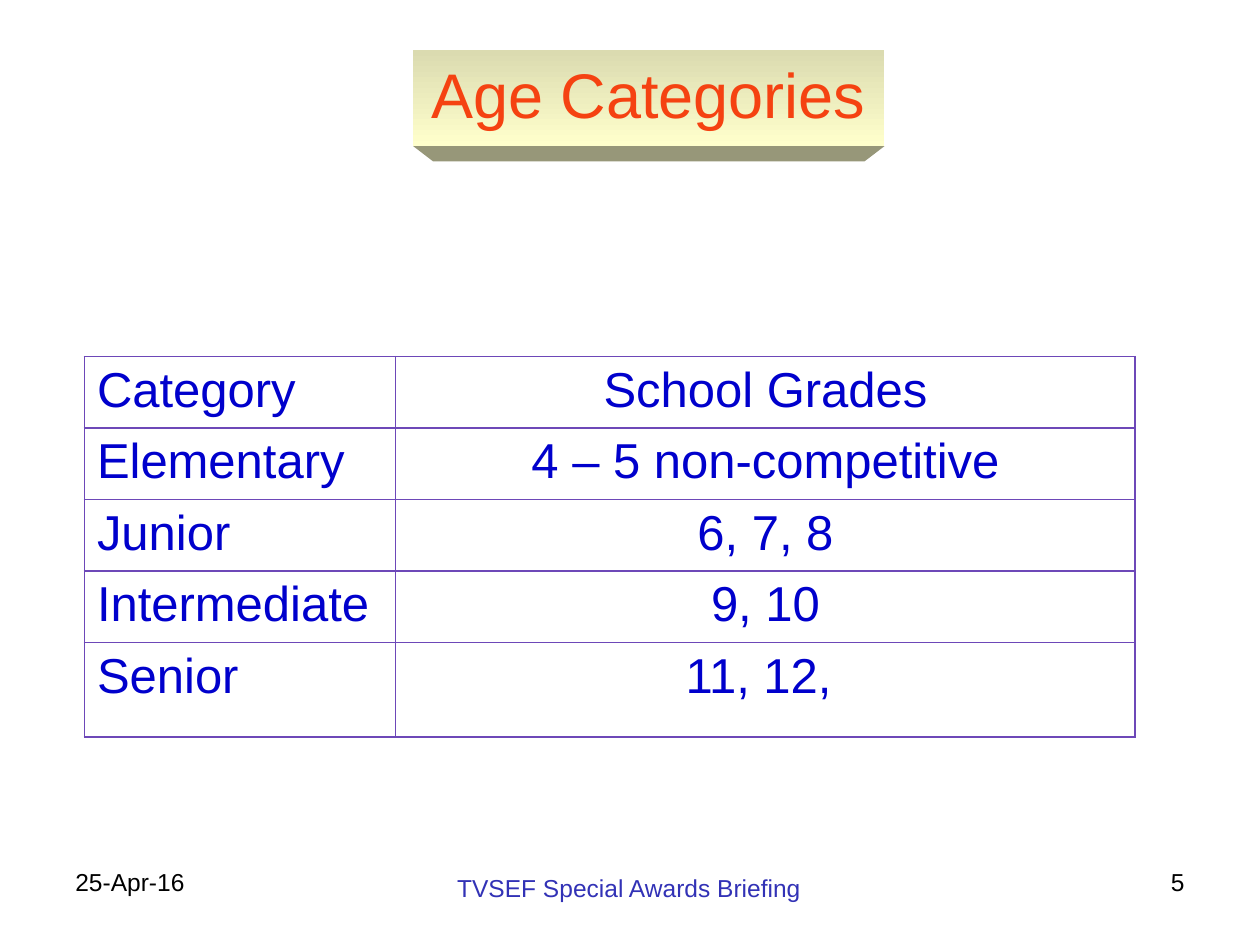
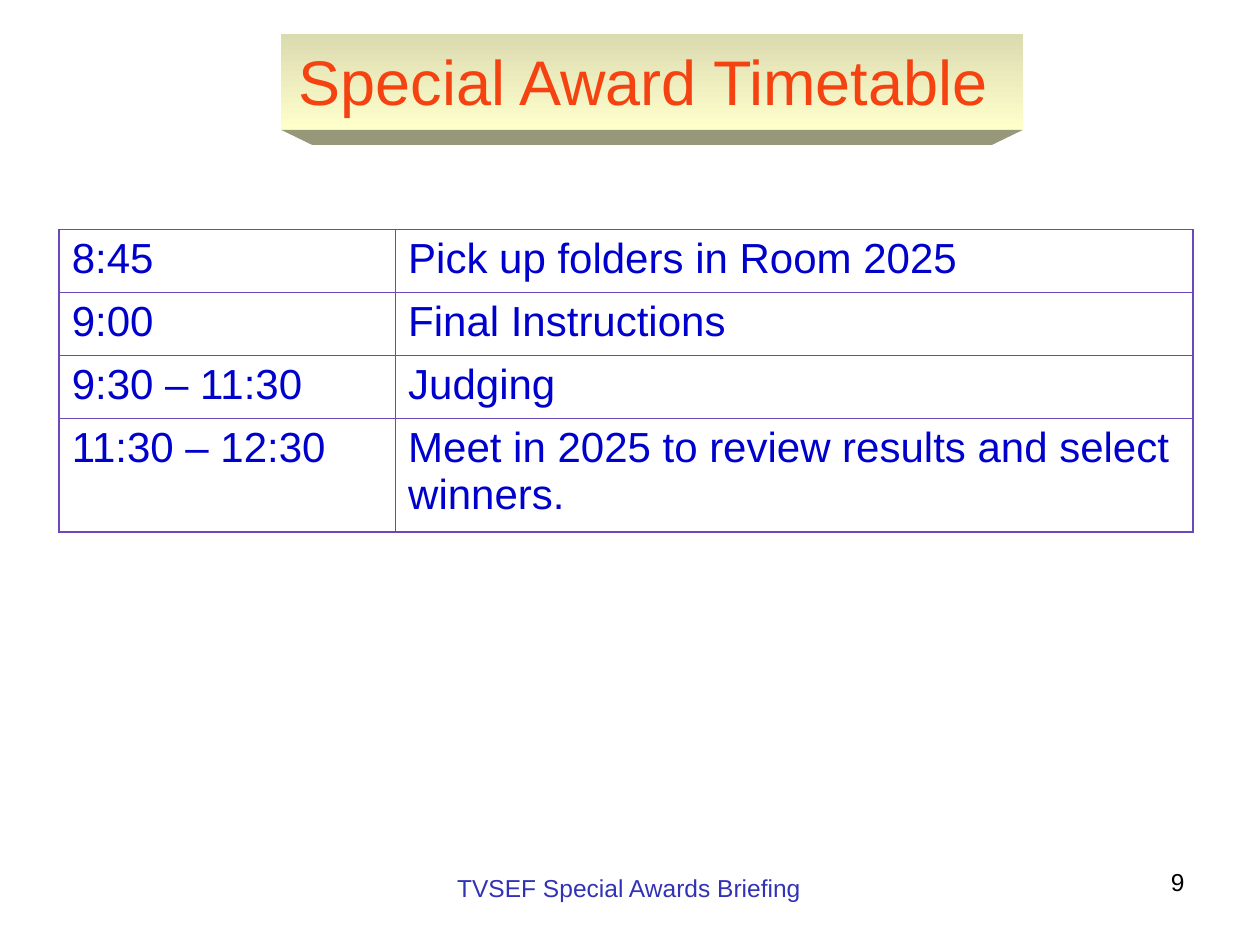
from lxml import etree
from pptx import Presentation
from pptx.dml.color import RGBColor
from pptx.enum.shapes import MSO_SHAPE as Shape
from pptx.enum.text import MSO_ANCHOR as Anchor, PP_ALIGN as Align
from pptx.oxml.ns import qn
from pptx.util import Inches, Pt

# Content
FOOT = "TVSEF Special Awards Briefing"
PAGES = [
    dict(
        title="Age Categories", head=(2.98, 0.39, 4.33, 0.7),
        band=(3.28, 0.4, 3.74, 0.76), date="25-Apr-16", num="5",
        at=(0.67, 2.83), cols=(2.47, 5.87), size=28,
        aligns=(Align.LEFT, Align.CENTER),
        heights=(0.53, 0.53, 0.53, 0.53, 0.75),
        rows=[
            ("Category", "School Grades"),
            ("Elementary", "4 – 5 non-competitive"),
            ("Junior", "6, 7, 8"),
            ("Intermediate", "9, 10"),
            ("Senior", "11, 12, "),
        ],
    ),
    dict(
        title="Special Award Timetable", head=(1.93, 0.28, 6.35, 0.72),
        band=(2.23, 0.27, 5.89, 0.76), date=None, num="9",
        at=(0.47, 1.82), cols=(2.67, 6.33), size=24,
        aligns=(Align.LEFT, Align.LEFT),
        heights=(0.47, 0.47, 0.5, 0.84),
        rows=[
            ("8:45", "Pick up folders in Room 2025"),
            ("9:00", "Final Instructions"),
            ("9:30 – 11:30", "Judging"),
            ("11:30 – 12:30", "Meet in 2025 to review results and select winners."),
        ],
    ),
]

# Shared style
FONT = "Arial"
RED, BLUE, INDIGO, BLACK = "F54211", "0000CC", "3232B6", "000000"
RULE, TOP, LOW, EDGE = "6D48B8", "DBDBB0", "FFFFCC", "979779"
DEPTH, SLANT = 0.12, 0.042  # bevel height, and its inset per band width


def color(code):
    return RGBColor.from_string(code)


def write(frame, text, size, code, align=Align.LEFT):
    para = frame.paragraphs[0]
    para.alignment = align
    run = para.add_run()
    run.text = text
    run.font.name = FONT
    run.font.size = Pt(size)
    run.font.color.rgb = color(code)


def label(slide, box, text, size, code, align=Align.LEFT, anchor=Anchor.TOP, wrap=True):
    frame = slide.shapes.add_textbox(*map(Inches, box)).text_frame
    frame.word_wrap = wrap
    frame.vertical_anchor = anchor
    write(frame, text, size, code, align)


def add_band(slide, box):
    # Face with a vertical gradient
    face = slide.shapes.add_shape(Shape.RECTANGLE, *map(Inches, box))
    face.shadow.inherit = False
    face.line.fill.background()
    face.fill.gradient()
    face.fill.gradient_angle = 270
    for stop, code in zip(face.fill.gradient_stops, (TOP, LOW)):
        stop.color.rgb = color(code)
    # Bevel below the face
    x, y, w, h = box
    low, inset = y + h, w * SLANT
    pen = slide.shapes.build_freeform(Inches(x), Inches(low))
    pen.add_line_segments([
        (Inches(px), Inches(py)) for px, py in (
            (x + w, low), (x + w - inset, low + DEPTH), (x + inset, low + DEPTH))
    ])
    edge = pen.convert_to_shape()
    edge.shadow.inherit = False
    edge.line.fill.background()
    edge.fill.solid()
    edge.fill.fore_color.rgb = color(EDGE)


def add_rules(cell):
    props = cell._tc.get_or_add_tcPr()
    for side in ("lnL", "lnR", "lnT", "lnB"):
        line = etree.SubElement(props, qn(f"a:{side}"), w=str(Pt(1)))
        fill = etree.SubElement(line, qn("a:solidFill"))
        etree.SubElement(fill, qn("a:srgbClr"), val=RULE)


def add_grid(slide, page):
    rows, cols, heights = page["rows"], page["cols"], page["heights"]
    box = (*page["at"], sum(cols), sum(heights))
    table = slide.shapes.add_table(len(rows), len(cols), *map(Inches, box)).table
    table.first_row = table.horz_banding = False
    for col, width in zip(table.columns, cols):
        col.width = Inches(width)
    for row, height, texts in zip(table.rows, heights, rows):
        row.height = Inches(height)
        for cell, text, align in zip(row.cells, texts, page["aligns"]):
            add_rules(cell)
            cell.fill.background()
            write(cell.text_frame, text, page["size"], BLUE, align)


def add_page(deck, page):
    slide = deck.slides.add_slide(deck.slide_layouts[6])
    # Footers
    label(slide, (3.53, 6.88, 2.95, 0.34), FOOT, 14, INDIGO, wrap=False)
    if page["date"]:
        label(slide, (0.5, 6.83, 2.33, 0.52), page["date"], 14, BLACK)
    label(slide, (7.17, 6.83, 2.33, 0.52), page["num"], 14, BLACK, Align.RIGHT)
    # Title and table
    add_band(slide, page["band"])
    label(slide, page["head"], page["title"], 36, RED, Align.CENTER, Anchor.MIDDLE)
    add_grid(slide, page)


def main():
    deck = Presentation()
    deck.slide_width, deck.slide_height = Inches(10), Inches(7.5)
    for page in PAGES:
        add_page(deck, page)
    deck.save("out.pptx")


if __name__ == "__main__":
    main()
